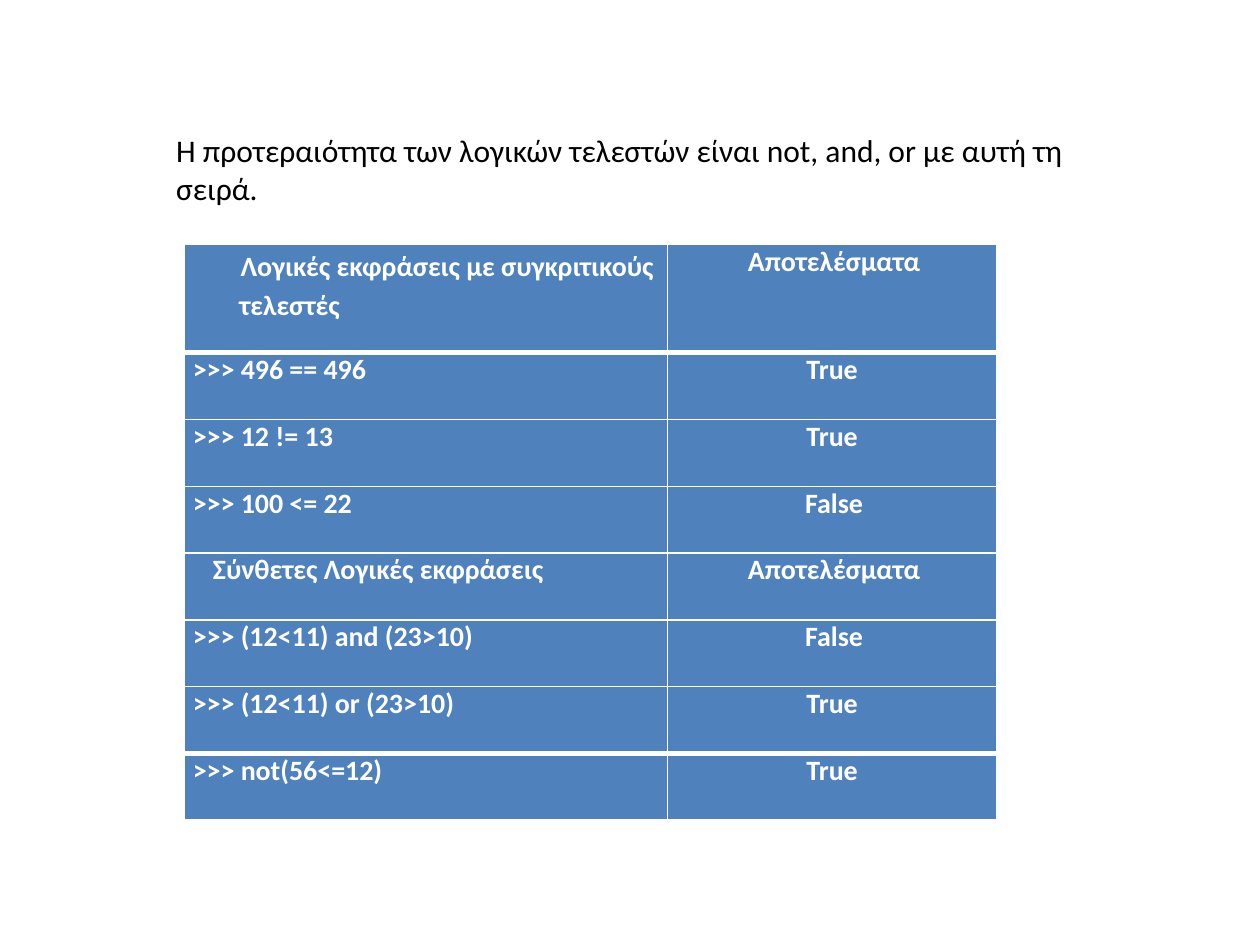
from lxml import etree
from pptx import Presentation
from pptx.dml.color import RGBColor
from pptx.enum import text
from pptx.oxml import ns
from pptx.util import Inches, Pt

COLORS = {"text": "000000", "cell": "4F81BD", "line": "FFFFFF", "cell_text": "FFFFFF"}
ROWS = [
    ("Λογικές εκφράσεις με συγκριτικούς τελεστές", "Αποτελέσματα"),
    (">>> 496 == 496", "True"),
    (">>> 12 != 13", "True"),
    (">>> 100 <= 22", "False"),
    ("Σύνθετες Λογικές εκφράσεις", "Αποτελέσματα"),
    (">>> (12<11) and (23>10)", "False"),
    (">>> (12<11) or (23>10)", "True"),
    (">>> not(56<=12)", "True"),
]
LEFT_INDENTS = {0: 0.44, 4: 0.23}
HEAVY_EDGES = (1, 7)


def style_runs(paragraph, size, color, bold=False):
    for run in paragraph.runs:
        run.font.name = "Calibri"
        run.font.size = Pt(size)
        run.font.bold = bold
        run.font.color.rgb = RGBColor.from_string(color)


def add_borders(cell, widths):
    properties = cell._tc.get_or_add_tcPr()
    for side, width in widths.items():
        line = etree.SubElement(properties, ns.qn(f"a:ln{side}"), w=str(Pt(width)))
        fill = etree.SubElement(line, ns.qn("a:solidFill"))
        etree.SubElement(fill, ns.qn("a:srgbClr"), val=COLORS["line"])


presentation = Presentation()
presentation.slide_width = Inches(10)
presentation.slide_height = Inches(7.5)
slide = presentation.slides.add_slide(presentation.slide_layouts[6])

intro = slide.shapes.add_textbox(Inches(1.3), Inches(0.99), Inches(7.56), Inches(0.71))
intro.text_frame.word_wrap = True
intro.text_frame.auto_size = text.MSO_AUTO_SIZE.SHAPE_TO_FIT_TEXT
intro.text_frame.text = "Η προτεραιότητα των λογικών τελεστών είναι not, and, or με αυτή τη σειρά."
style_runs(intro.text_frame.paragraphs[0], 18, COLORS["text"])

table = slide.shapes.add_table(
    len(ROWS), 2, Inches(1.46), Inches(1.94), Inches(6.45), Inches(4.57)
).table
table.columns[0].width = Inches(3.84)
table.columns[1].width = Inches(2.61)

for row_index, row in enumerate(ROWS):
    table.rows[row_index].height = Inches(0.53 if row_index else 0.86)
    top, bottom = (3 if edge in HEAVY_EDGES else 1 for edge in (row_index, row_index + 1))
    for column_index, content in enumerate(row):
        cell = table.cell(row_index, column_index)
        cell.margin_left = cell.margin_right = cell.margin_top = cell.margin_bottom = 0
        add_borders(cell, {"L": 1, "R": 1, "T": top, "B": bottom})
        cell.fill.solid()
        cell.fill.fore_color.rgb = RGBColor.from_string(COLORS["cell"])
        cell.text_frame.text = content
        paragraph = cell.text_frame.paragraphs[0]
        paragraph.space_before = Pt(5)
        style_runs(paragraph, 16, COLORS["cell_text"], bold=True)
        if column_index == 0:
            indent = LEFT_INDENTS.get(row_index, 0.07)
        else:
            paragraph.alignment = text.PP_ALIGN.CENTER
            indent = 0 if content == "True" else 0.03
        paragraph._p.get_or_add_pPr().set("marL", str(Inches(indent)))

heading = table.cell(0, 0).text_frame.paragraphs[0]
heading.line_spacing = 1.15
heading._p.get_or_add_pPr().set("indent", str(Inches(0.01)))
table.cell(0, 1).text_frame.paragraphs[0].space_before = Pt(13.4)

presentation.save("out.pptx")
